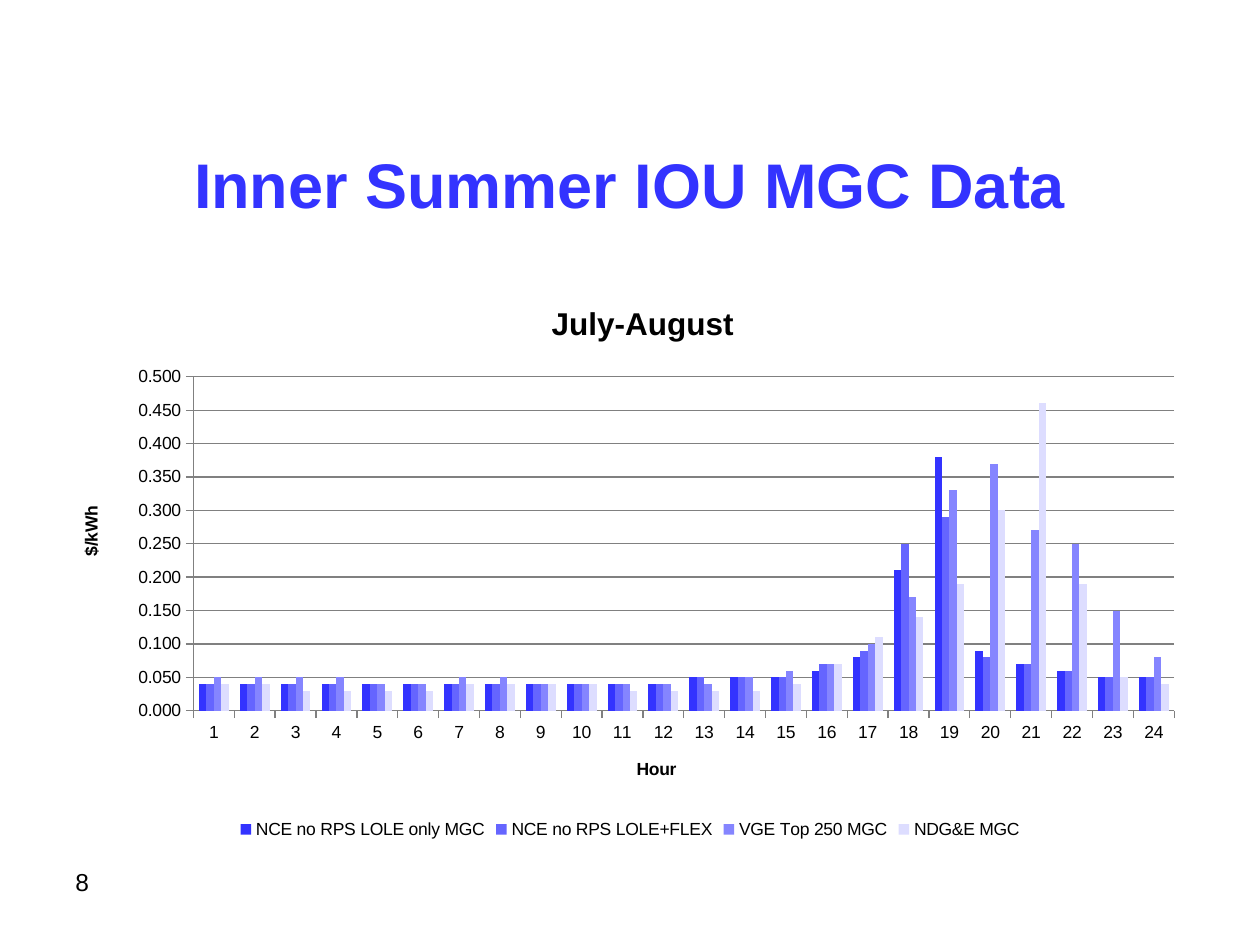
from dataclasses import dataclass

from lxml import etree
from pptx import Presentation, util as u
from pptx.chart.data import CategoryChartData
from pptx.dml.color import RGBColor
from pptx.enum import chart as ch, text
from pptx.oxml.ns import qn

FONT = "Arial"
COLOURS = {"title": "3333FF", "ink": "000000", "grid": "808080"}


@dataclass
class Label:
    wording: str
    box: tuple[float, float, float, float]
    size: int
    colour: str
    bold: bool = False
    align: text.PP_ALIGN = text.PP_ALIGN.LEFT
    anchor: text.MSO_ANCHOR = text.MSO_ANCHOR.TOP


@dataclass
class Utility:
    name: str
    colour: str
    hourly_cost: list[float]


HEADING = Label("Inner Summer IOU MGC Data", (1.27, 2.32, 22.86, 2.74), 36, "title",
                True, text.PP_ALIGN.CENTER, text.MSO_ANCHOR.MIDDLE)
PAGE_NUMBER = Label("8", (1.27, 17.35, 4.65, 1.32), 14, "ink")

UTILITIES = [
    Utility("NCE no RPS LOLE only MGC", "3333FF", [
        0.04, 0.04, 0.04, 0.04, 0.04, 0.04, 0.04, 0.04,
        0.04, 0.04, 0.04, 0.04, 0.05, 0.05, 0.05, 0.06,
        0.08, 0.21, 0.38, 0.09, 0.07, 0.06, 0.05, 0.05]),
    Utility("NCE no RPS LOLE+FLEX", "6565FF", [
        0.04, 0.04, 0.04, 0.04, 0.04, 0.04, 0.04, 0.04,
        0.04, 0.04, 0.04, 0.04, 0.05, 0.05, 0.05, 0.07,
        0.09, 0.25, 0.29, 0.08, 0.07, 0.06, 0.05, 0.05]),
    Utility("VGE Top 250 MGC", "8585FF", [
        0.05, 0.05, 0.05, 0.05, 0.04, 0.04, 0.05, 0.05,
        0.04, 0.04, 0.04, 0.04, 0.04, 0.05, 0.06, 0.07,
        0.10, 0.17, 0.33, 0.37, 0.27, 0.25, 0.15, 0.08]),
    Utility("NDG&E MGC", "DDDDFF", [
        0.04, 0.04, 0.03, 0.03, 0.03, 0.03, 0.04, 0.04,
        0.04, 0.04, 0.03, 0.03, 0.03, 0.03, 0.04, 0.07,
        0.11, 0.14, 0.19, 0.30, 0.46, 0.19, 0.05, 0.04]),
]


def rgb(name: str) -> RGBColor:
    return RGBColor.from_string(COLOURS[name])


def style_font(font, size: int, colour: str, bold: bool) -> None:
    font.name, font.size, font.bold = FONT, u.Pt(size), bold
    font.color.rgb = rgb(colour)


def add_label(slide, label: Label) -> None:
    frame = slide.shapes.add_textbox(*map(u.Cm, label.box)).text_frame
    frame.word_wrap = True
    frame.vertical_anchor = label.anchor
    paragraph = frame.paragraphs[0]
    paragraph.alignment = label.align
    run = paragraph.add_run()
    run.text = label.wording
    style_font(run.font, label.size, label.colour, label.bold)


def place(element, **percents: float) -> None:
    """Set a manual layout, in percent of the chart area."""
    for old in element.findall(qn("c:layout")):
        element.remove(old)
    layout = etree.Element(qn("c:layout"))
    manual = etree.SubElement(layout, qn("c:manualLayout"))
    if "w" in percents:
        etree.SubElement(manual, qn("c:layoutTarget"), val="inner")
    for side in ("x", "y"):
        etree.SubElement(manual, qn(f"c:{side}Mode"), val="edge")
    for key, value in percents.items():
        etree.SubElement(manual, qn(f"c:{key}"), val=f"{value / 100:.4f}")
    element.insert(0 if element.find(qn("c:tx")) is None else 1, layout)


def write_title(title, wording: str, size: int, x: float, y: float) -> None:
    run = title.text_frame.paragraphs[0].add_run()
    run.text = wording
    style_font(run.font, size, "ink", True)
    place(title._element, x=x, y=y)


def style_axis(axis, wording: str, x: float, y: float) -> None:
    write_title(axis.axis_title, wording, 10, x, y)
    axis.major_tick_mark = ch.XL_TICK_MARK.OUTSIDE
    axis.minor_tick_mark = ch.XL_TICK_MARK.NONE
    axis.format.line.color.rgb = rgb("grid")


def add_cost_chart(slide) -> None:
    data = CategoryChartData(number_format="0.000")
    data.categories = [str(hour) for hour in range(1, 25)]
    for utility in UTILITIES:
        data.add_series(utility.name, utility.hourly_cost)
    box = map(u.Cm, (1.27, 5.72, 22.86, 11.3))
    chart = slide.shapes.add_chart(ch.XL_CHART_TYPE.COLUMN_CLUSTERED, *box, data).chart
    style_font(chart.font, 10, "ink", False)
    write_title(chart.chart_title, "July-August", 18, 42.6, 2.4)

    style_axis(chart.category_axis, "Hour", 50.3, 83.9)
    costs = chart.value_axis
    style_axis(costs, "$/kWh", 1.2, 39.1)
    costs.minimum_scale, costs.maximum_scale, costs.major_unit = 0, 0.5, 0.05
    costs.tick_labels.number_format = "0.000"
    costs.tick_labels.number_format_is_linked = False
    costs.has_major_gridlines = True
    costs.major_gridlines.format.line.color.rgb = rgb("grid")

    chart.has_legend = True
    chart.legend.position = ch.XL_LEGEND_POSITION.BOTTOM
    chart.legend.include_in_layout = False

    plot = chart.plots[0]
    plot.gap_width, plot.overlap = 150, 0
    plot.vary_by_categories = False
    for series, utility in zip(plot.series, UTILITIES):
        series.format.fill.solid()
        series.format.fill.fore_color.rgb = RGBColor.from_string(utility.colour)
    place(chart._chartSpace.chart.plotArea, x=11.5, y=16.6, w=86.5, h=59.6)


def main() -> None:
    deck = Presentation()
    deck.slide_width, deck.slide_height = u.Cm(25.4), u.Cm(19.05)
    slide = deck.slides.add_slide(deck.slide_layouts[6])
    add_label(slide, HEADING)
    add_label(slide, PAGE_NUMBER)
    add_cost_chart(slide)
    deck.save("out.pptx")


if __name__ == "__main__":
    main()
